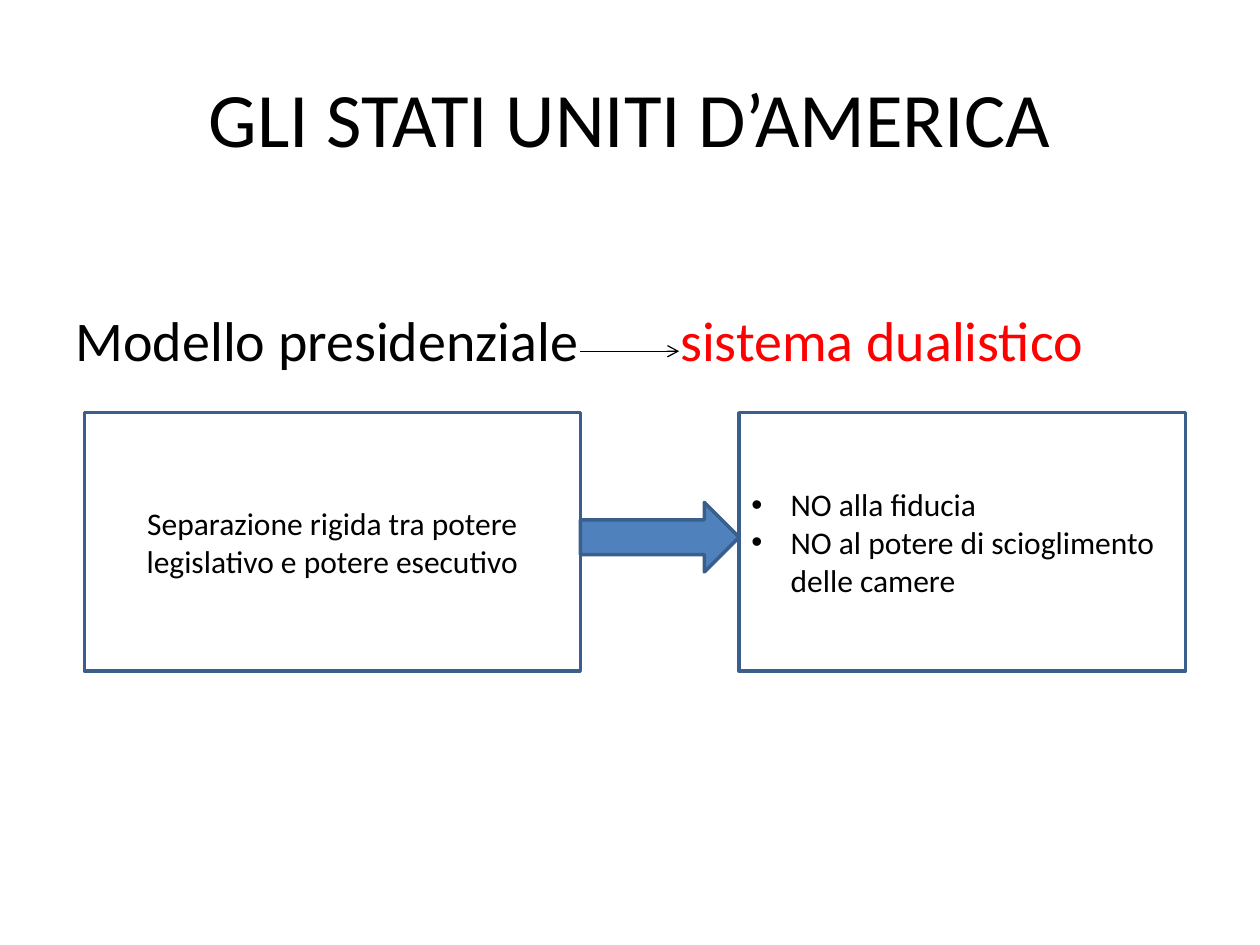
from pptx import Presentation
from pptx import util as u
from pptx.dml.color import RGBColor
from pptx.enum import shapes, text
from pptx.oxml.ns import qn
from lxml import etree

INK = {"black": "000000", "red": "FF0000", "blue": "4F81BD", "edge": "3A5F8C"}
FONT = "Calibri"


def sub(node, tag, **attrs):
    return etree.SubElement(node, qn(tag), attrs)


class Deck:
    def __init__(self):
        self.prs = Presentation()
        self.prs.slide_width, self.prs.slide_height = u.Cm(25.4), u.Cm(19.05)
        self.page = self.prs.slides.add_slide(self.prs.slide_layouts[1])

    def color(self, name):
        return RGBColor.from_string(INK[name])

    def run(self, par, words, size, ink="black", track=0):
        """Add a run; track is extra letter spacing in points."""
        run = par.add_run()
        run.text = words
        run.font.name, run.font.size = FONT, u.Pt(size)
        run.font.color.rgb = self.color(ink)
        if track:
            run._r.get_or_add_rPr().set("spc", str(round(track * 100)))

    def place(self, item, x, y, w, h):
        item.left, item.top, item.width, item.height = map(u.Cm, (x, y, w, h))

    def title(self, words, *box):
        item = self.page.shapes.title
        self.place(item, *box)
        frame = item.text_frame
        frame.vertical_anchor = text.MSO_ANCHOR.MIDDLE
        par = frame.paragraphs[0]
        par.alignment = text.PP_ALIGN.CENTER
        self.run(par, words, 44)

    def body(self, runs, inset, *box):
        """One unbulleted line, set below the top edge by the inset."""
        item = self.page.placeholders[1]
        self.place(item, *box)
        frame = item.text_frame
        frame.margin_top = u.Cm(inset)
        par = frame.paragraphs[0]
        par.space_before = u.Pt(0)
        props = par._p.get_or_add_pPr()
        props.set("marL", "0")
        props.set("indent", "0")
        sub(props, "a:buNone")
        for words, ink, track in runs:
            self.run(par, words, 32, ink, track)

    def shape(self, kind, fill, *box):
        item = self.page.shapes.add_shape(kind, *map(u.Cm, box))
        item.shadow.inherit = False
        if fill:
            item.fill.solid()
            item.fill.fore_color.rgb = self.color(fill)
        else:
            item.fill.background()
        item.line.color.rgb = self.color("edge")
        item.line.width = u.Pt(2)
        return item

    def panel(self, lines, listed, *box):
        frame = self.shape(shapes.MSO_SHAPE.RECTANGLE, None, *box).text_frame
        frame.word_wrap = True
        frame.vertical_anchor = text.MSO_ANCHOR.MIDDLE
        for i, words in enumerate(lines):
            par = frame.add_paragraph() if i else frame.paragraphs[0]
            par.alignment = text.PP_ALIGN.LEFT if listed else text.PP_ALIGN.CENTER
            if listed:
                props = par._p.get_or_add_pPr()
                props.set("marL", str(u.Cm(0.79)))
                props.set("indent", str(u.Cm(-0.79)))
                sub(props, "a:buFont", typeface="Arial")
                sub(props, "a:buChar", char="•")
            self.run(par, words, 18)

    def arrow(self, x1, y1, x2, y2):
        line = self.page.shapes.add_connector(
            shapes.MSO_CONNECTOR.STRAIGHT, *map(u.Cm, (x1, y1, x2, y2)))
        line.line.color.rgb = self.color("black")
        line.line.width = u.Pt(0.75)
        sub(line.line._get_or_add_ln(), "a:tailEnd", type="arrow")
        sub(line._element.spPr, "a:effectLst")


def main():
    deck = Deck()

    # Heading and key sentence; one widened space leaves room for the arrow
    deck.title("GLI STATI UNITI D’AMERICA", 1.27, 0.76, 22.86, 3.18)
    deck.body([("Modello presidenziale", "black", 0), (" ", "black", 50.6),
               ("sistema dualistico", "red", 0)],
              1.7, 1.27, 4.45, 22.86, 13.87)
    deck.arrow(11.7, 7.08, 13.69, 7.08)

    # Two panels, with the block arrow filling the gap
    left, top, wide, high, gap = 1.7, 8.32, 10, 5.21, 3.2
    edge = left + wide
    deck.panel(["Separazione rigida tra potere legislativo e potere esecutivo"],
               False, left, top, wide, high)
    deck.shape(shapes.MSO_SHAPE.RIGHT_ARROW, "blue", edge, 10.13, gap, 1.4)
    deck.panel(["NO alla fiducia", "NO al potere di scioglimento delle camere"],
               True, edge + gap, top, 9, high)

    deck.prs.save("out.pptx")


if __name__ == "__main__":
    main()
